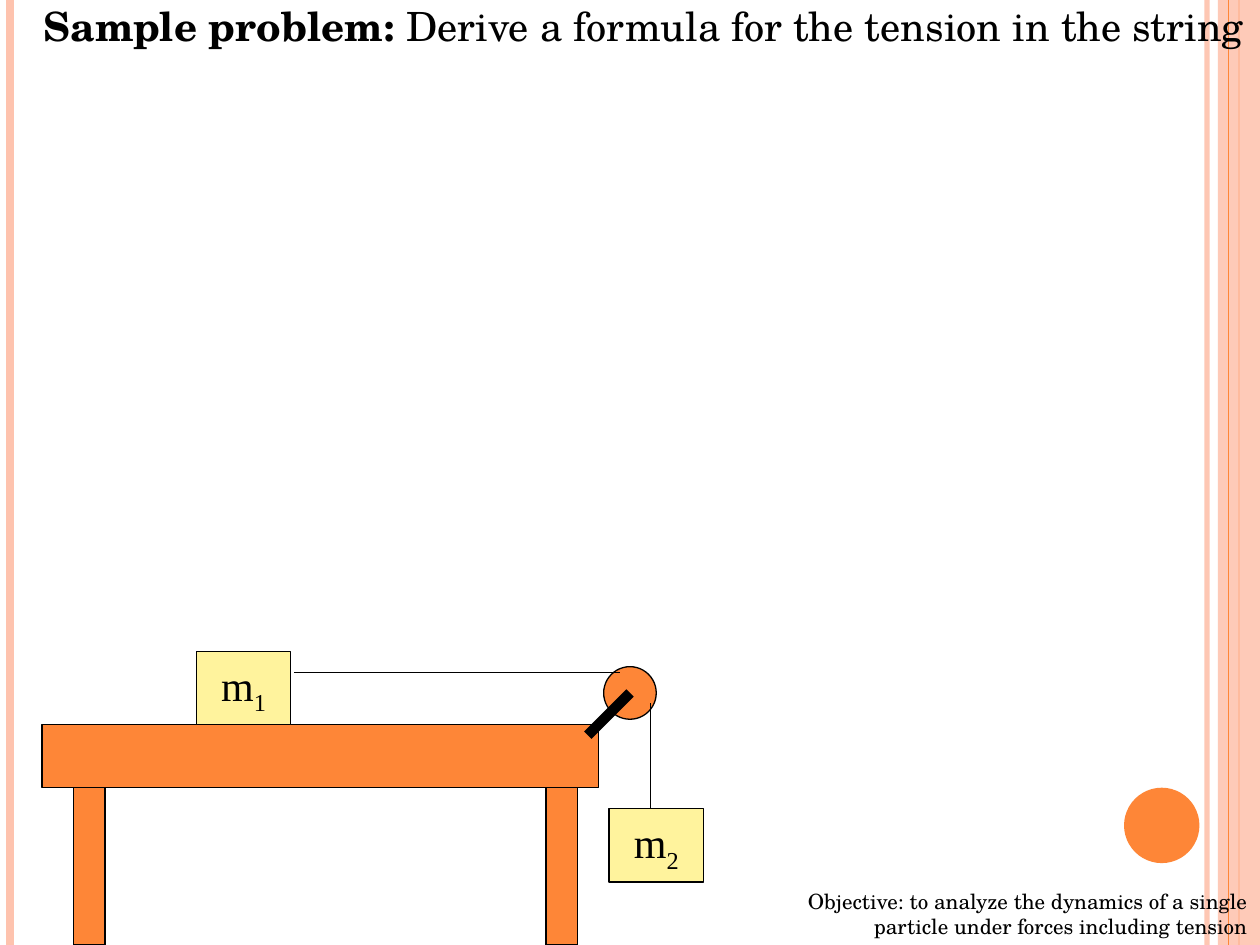
from lxml.etree import SubElement
from pptx import Presentation
from pptx.dml.color import RGBColor
from pptx.enum.shapes import MSO_CONNECTOR, MSO_SHAPE
from pptx.enum.text import MSO_ANCHOR as Anchor, PP_ALIGN as Align
from pptx.oxml.ns import qn
from pptx.util import Cm, Pt

BLACK = RGBColor(0x00, 0x00, 0x00)
ORANGE = RGBColor(0xFE, 0x86, 0x37)
PEACH = RGBColor(0xFE, 0xC3, 0xAE)
YELLOW = RGBColor(0xFF, 0xF3, 0x9D)
SERIF = "TeX Gyre Schola"

deck = Presentation()
deck.slide_width, deck.slide_height = Cm(25.4), Cm(19.05)
page = deck.slides.add_slide(deck.slide_layouts[1])
page.shapes.title.element.getparent().remove(page.shapes.title.element)


def add_block(kind, left, top, width, height, fill, outline=BLACK):
    block = page.shapes.add_shape(kind, Cm(left), Cm(top), Cm(width), Cm(height))
    block.shadow.inherit = False
    block.fill.solid()
    block.fill.fore_color.rgb = fill
    if outline is None:
        block.line.fill.background()
    else:
        block.line.color.rgb = outline
        block.line.width = Pt(0.75)
    return block


def add_line(x1, y1, x2, y2, color, width):
    line = page.shapes.add_connector(
        MSO_CONNECTOR.STRAIGHT, Cm(x1), Cm(y1), Cm(x2), Cm(y2))
    line.line.color.rgb = color
    line.line.width = Pt(width)
    SubElement(line.element.spPr, qn("a:effectLst"))
    return line


# Side stripes and dot
stripe = add_line(24.33, 0, 24.33, 19.05, PEACH, 3)
add_line(0.21, 0, 0.21, 19.05, PEACH, 4.5)
add_line(24.98, 0, 24.98, 19.05, ORANGE, 1.5)
band = add_block(MSO_SHAPE.RECTANGLE, 24.55, 0, 0.85, 19.05, PEACH, None)
add_line(24.77, 0, 24.77, 19.05, ORANGE, 0.75)
add_block(MSO_SHAPE.OVAL, 22.66, 15.88, 1.52, 1.52, ORANGE, None)
for shape, opacity in ((stripe, 93), (band, 87)):
    color = next(shape.element.spPr.iter(qn("a:srgbClr")))
    SubElement(color, qn("a:alpha"), val=str(opacity * 1000))

# Problem statement, in front of the stripes
body = page.placeholders[1]
page.shapes._spTree.append(body.element)
body.left, body.top, body.width, body.height = Cm(0), Cm(0), Cm(25.4), Cm(2.96)
body.text_frame.vertical_anchor = Anchor.TOP
para = body.text_frame.paragraphs[0]
para.line_spacing = 0.9
para.space_before = Pt(6)
para.font.color.rgb = BLACK
properties = para._p.get_or_add_pPr()
properties.set("marL", str(Cm(0.76)))
properties.set("indent", str(Cm(-0.13)))
properties.insert_element_before(
    properties.makeelement(qn("a:buNone")), "a:tabLst", "a:defRPr", "a:extLst")
for text, bold in (("Sample problem:", True),
                   (" Derive a formula for the tension in the string", False)):
    span = para.add_run()
    span.text = text
    span.font.bold = bold
    # Set on the run, so that the placeholder's own size and font do not win
    span.font.size = Pt(23)
    span.font.name = SERIF

# Table with its two legs
add_block(MSO_SHAPE.RECTANGLE, 0.85, 14.61, 11.22, 1.27, ORANGE)
for left in (1.48, 11.01):
    add_block(MSO_SHAPE.RECTANGLE, left, 15.88, 0.64, 3.17, ORANGE)

# Pulley, its arm and the string
add_block(MSO_SHAPE.OVAL, 12.17, 13.44, 1.06, 1.06, ORANGE)
add_line(11.85, 14.82, 12.7, 13.97, BLACK, 6)
add_line(5.93, 13.55, 12.49, 13.55, BLACK, 0.75)
add_line(13.12, 16.72, 13.12, 14.18, BLACK, 0.75)

# Masses
for left, top, index in ((3.96, 13.13, "1"), (12.28, 16.3, "2")):
    mass = add_block(MSO_SHAPE.RECTANGLE, left, top, 1.9, 1.48, YELLOW)
    mass.text_frame.word_wrap = False
    mass.text_frame.vertical_anchor = Anchor.MIDDLE
    para = mass.text_frame.paragraphs[0]
    para.alignment = Align.CENTER
    para.font.size = Pt(24)
    para.font.name = "Times New Roman"
    para.font.color.rgb = BLACK
    para.add_run().text = "m"
    span = para.add_run()
    span.text = index
    span.font._element.set("baseline", "-25000")

# Objective
box = page.shapes.add_textbox(Cm(15.03), Cm(17.78), Cm(10.37), Cm(1.27))
box.text_frame.word_wrap = True
para = box.text_frame.paragraphs[0]
para.text = ("Objective: to analyze the dynamics of a single particle "
             "under forces including tension")
para.alignment = Align.RIGHT
para.font.size = Pt(12)
para.font.name = SERIF
para.font.color.rgb = BLACK

deck.save("out.pptx")
